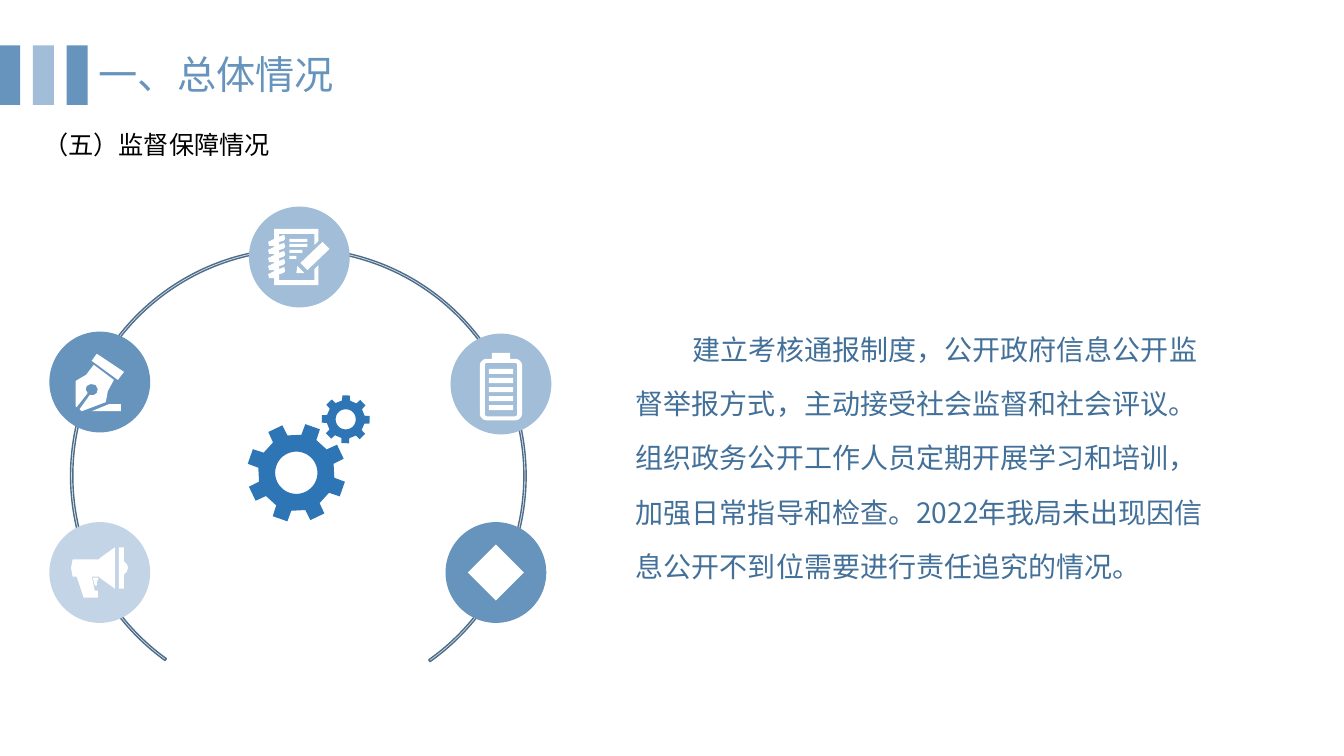
from math import cos, radians, sin

from lxml.etree import SubElement
from pptx import Presentation
from pptx.dml.color import RGBColor
from pptx.enum.shapes import MSO_SHAPE
from pptx.enum.text import MSO_ANCHOR, PP_ALIGN
from pptx.oxml.ns import qn
from pptx.util import Pt

COLORS = {
    "steel": "6794BD",
    "sky": "A1BDD7",
    "pale": "C2D4E5",
    "gear": "2E75B6",
    "arc": "EDEDED",
    "arc_line": "4C6D8C",
    "body": "427099",
    "black": "000000",
    "white": "FFFFFF",
}
FONT = "Noto Sans CJK SC"
ICON_UNIT = Pt(0.72)
ICON_PRECISION = 10
BADGE_SIZE = 72


def write_text(shape, text, size, color, indent=0, line_spacing=1.0):
    frame = shape.text_frame
    frame.word_wrap = True
    frame.vertical_anchor = MSO_ANCHOR.TOP
    paragraph = frame.paragraphs[0]
    paragraph.alignment = PP_ALIGN.LEFT
    paragraph.line_spacing = line_spacing
    if indent:
        paragraph._p.get_or_add_pPr().set("indent", str(Pt(indent)))
    run = paragraph.add_run()
    run.text = text
    run.font.name = FONT
    run.font.size = Pt(size)
    run.font.color.rgb = RGBColor.from_string(COLORS[color])
    SubElement(run._r.get_or_add_rPr(), qn("a:ea")).set("typeface", FONT)


def box(left, top, right, bottom):
    return [(left, top), (right, top), (right, bottom), (left, bottom)]


def arc(center_x, center_y, radius, start, end, steps):
    angles = [radians(start + (end - start) * step / steps) for step in range(steps + 1)]
    return [(center_x + radius * cos(angle), center_y + radius * sin(angle)) for angle in angles]


def rounded_box(left, top, right, bottom, radius):
    corners = box(left + radius, top + radius, right - radius, bottom - radius)
    points = []
    for index, (x, y) in enumerate(corners):
        start = 180 + 90 * index
        points += arc(x, y, radius, start, start + 90, 6)
    return points


def gear(center_x, center_y, outer, root, hole, first_tooth):
    outline = []
    for tooth in range(8):
        angle = first_tooth + 45 * tooth
        for radius, offset in ((root, -12), (outer, -9), (outer, 9), (root, 12)):
            outline += arc(center_x, center_y, radius, angle + offset, angle + offset, 1)[:1]
    return [outline, arc(center_x, center_y, hole, 0, 360, 36)]


def notebook():
    outline = [(25, 22), (69, 22), (69, 34), (65, 38), (65, 27), (30, 27)]
    for y in range(30, 63, 8):
        outline += [(30, y), (32, y - 1), (35, y - 2), (36, y + 2), (34, y + 4), (30, y + 5)]
    outline += [(30, 73), (65, 73), (65, 62), (69, 58), (69, 78), (25, 78)]
    for y in range(64, 31, -8):
        outline += [(25, y + 7), (20, y + 7), (19, y + 3), (25, y)]
    text_lines = [box(40, y, right, y + 3) for y, right in ((32, 58), (37, 58), (43, 53), (49, 47))]
    pencil_tip = [(47, 66), (55, 66), (48, 59)]
    pencil = [(73, 35), (51, 56), (58, 63), (80, 42)]
    return [outline, *text_lines, pencil_tip, pencil]


def battery():
    bars = [box(38, y, 62, y + 5) for y in range(35, 72, 9)]
    case = [rounded_box(29, 25, 71, 86, 7), rounded_box(34, 29, 66, 82, 2)]
    return [*case, box(41, 19, 59, 25), *bars]


PEN = [
    [(27, 75), (26, 74), (26, 49), (36.4, 42.9), (44, 33), (64, 48), (58, 59), (56, 70),
     (32, 79), (30, 77), (40, 63), (44, 63), (47, 61), (48, 57), (46, 53), (41, 52),
     (37, 54), (36, 57.5), (38, 61)],
    [(42, 79), (71, 79), (71, 72), (59, 72)],
    [(68, 48), (74, 40), (47, 22), (42, 29)],
]
MEGAPHONE = [
    [(23, 37), (49, 37), (51, 35), (65, 25), (65, 66), (51, 56), (49, 54), (42, 54),
     (45, 68), (48, 68), (48, 75), (34, 75), (27, 54), (23, 54), (21.5, 45.5)],
    [(74, 39), (77, 42), (78, 45), (77, 49), (74, 52), (74, 66), (69, 66), (69, 25), (74, 25)],
    [(49, 55), (43, 55), (45, 63), (47, 63), (47, 60)],
]


class SlideBuilder:
    def __init__(self, slide):
        self.slide = slide
        self.shapes = slide.shapes

    def paint(self, shape, fill, line=None):
        shape.shadow.inherit = False
        shape.fill.solid()
        shape.fill.fore_color.rgb = RGBColor.from_string(COLORS[fill])
        if line:
            shape.line.color.rgb = RGBColor.from_string(COLORS[line])
            shape.line.width = Pt(1)
        else:
            shape.line.fill.background()

    def preset(self, kind, left, top, width, height, fill, line=None):
        shape = self.shapes.add_shape(kind, Pt(left), Pt(top), Pt(width), Pt(height))
        self.paint(shape, fill, line)
        return shape

    def icon(self, left, top, contours, fill):
        scaled = [
            [(x * ICON_PRECISION, y * ICON_PRECISION) for x, y in contour] for contour in contours
        ]
        builder = self.shapes.build_freeform(*scaled[0][0], scale=ICON_UNIT / ICON_PRECISION)
        for index, contour in enumerate(scaled):
            if index:
                builder.move_to(*contour[0])
            builder.add_line_segments(contour[1:], close=True)
        self.paint(builder.convert_to_shape(Pt(left), Pt(top)), fill)

    def badge(self, left, top, fill, contours=None):
        self.preset(MSO_SHAPE.OVAL, left, top, BADGE_SIZE, BADGE_SIZE, fill)
        if contours:
            self.icon(left, top, contours, "white")
        else:
            self.preset(MSO_SHAPE.DIAMOND, left + 16, top + 16, 40, 40, "white")

    def title(self, text, left, top, width, height, **style):
        shape = self.shapes.title
        shape.left, shape.top, shape.width, shape.height = map(Pt, (left, top, width, height))
        write_text(shape, text, **style)

    def text(self, text, left, top, width, height, **style):
        shape = self.shapes.add_textbox(Pt(left), Pt(top), Pt(width), Pt(height))
        write_text(shape, text, **style)


def main():
    presentation = Presentation()
    presentation.slide_width = Pt(960)
    presentation.slide_height = Pt(540)
    builder = SlideBuilder(presentation.slides.add_slide(presentation.slide_layouts[5]))

    ring = builder.preset(MSO_SHAPE.BLOCK_ARC, 50.4, 177.12, 325.44, 325.44, "arc", "arc_line")
    for index, value in enumerate((75.492, 32.803, 0.005)):
        ring.adjustments[index] = value

    builder.badge(177.84, 147.6, "sky", notebook())
    builder.badge(321.84, 238.32, "sky", battery())
    builder.badge(318.24, 372.96, "steel")
    builder.badge(35.28, 372.96, "pale", MEGAPHONE)
    builder.badge(35.28, 236.88, "steel", PEN)

    gears = gear(47, 77, 49, 38, 21, 19.5) + gear(96, 24, 24, 19, 10, 1)
    builder.icon(177.84, 282.24, gears, "gear")

    builder.title("一、总体情况", 63.36, 32.4, 370.8, 41.04, size=28, color="steel")
    for index, fill in enumerate(("steel", "sky", "steel")):
        builder.preset(MSO_SHAPE.RECTANGLE, -0.72 + 24.12 * index, 32.4, 15.12, 42.48, fill)
    builder.text("（五）监督保障情况", 23.76, 88.56, 243.36, 28.8, size=18, color="black")
    builder.text(
        "建立考核通报制度，公开政府信息公开监督举报方式，主动接受社会监督和社会评议。"
        "组织政务公开工作人员定期开展学习和培训，加强日常指导和检查。"
        "2022年我局未出现因信息公开不到位需要进行责任追究的情况。",
        447.12, 219.6, 432, 202.32,
        size=20, color="body", indent=40.32, line_spacing=Pt(38.6),
    )
    presentation.save("out.pptx")


if __name__ == "__main__":
    main()
